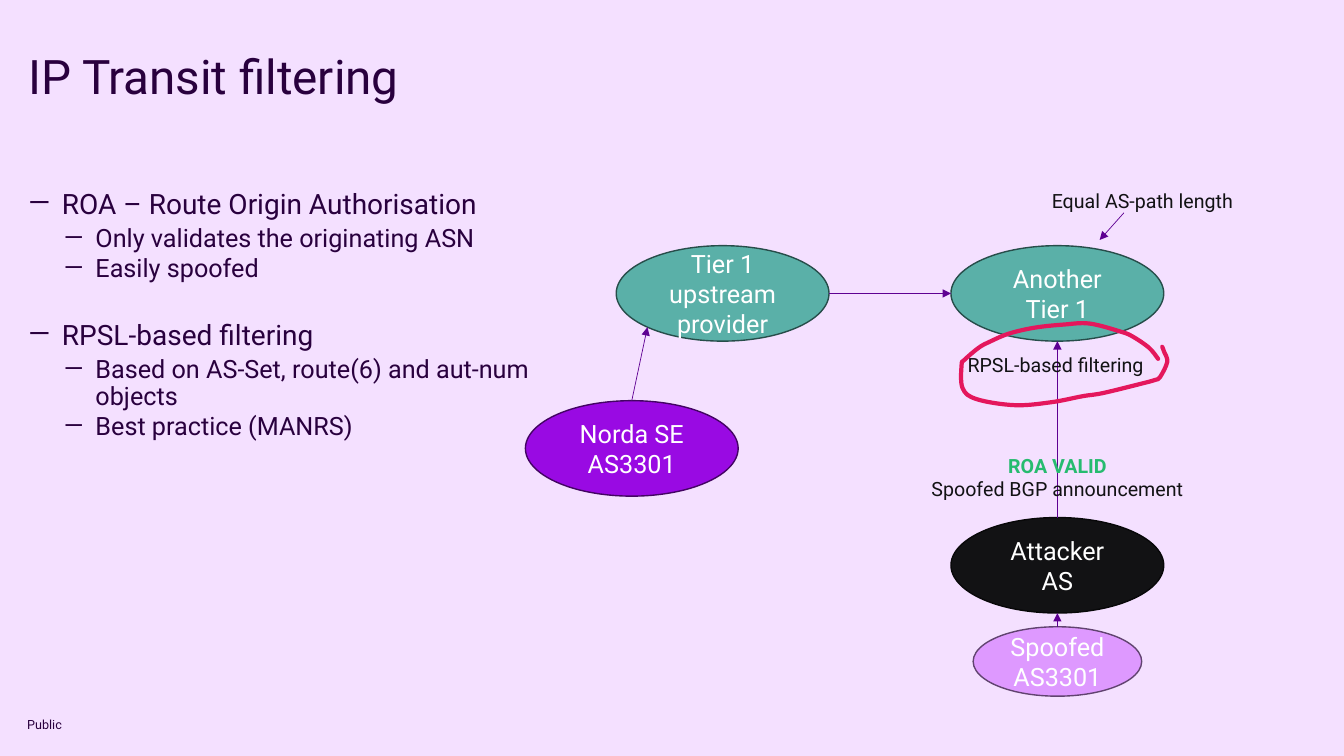
from itertools import chain
from lxml.etree import SubElement
from pptx import Presentation
from pptx.dml.color import RGBColor
from pptx.enum.shapes import MSO_CONNECTOR, MSO_SHAPE
from pptx.enum.text import MSO_ANCHOR, PP_ALIGN
from pptx.oxml.ns import qn
from pptx.util import Pt

FONT = "Roboto"
LILAC = RGBColor(0xF4, 0xE0, 0xFF)
PLUM = RGBColor(0x29, 0x00, 0x3E)
INK = RGBColor(0x12, 0x12, 0x14)
WHITE = RGBColor(0xFF, 0xFF, 0xFF)
TEAL = RGBColor(0x5A, 0xB0, 0xA8)
TEAL_EDGE = RGBColor(0x27, 0x4D, 0x4A)
PURPLE = RGBColor(0x99, 0x0A, 0xE3)
PURPLE_EDGE = RGBColor(0x43, 0x04, 0x63)
INK_EDGE = RGBColor(0x08, 0x08, 0x09)
ORCHID = RGBColor(0xDE, 0x99, 0xFF)
ORCHID_EDGE = RGBColor(0x61, 0x43, 0x70)
ARROW = RGBColor(0x5E, 0x00, 0x92)
GREEN = RGBColor(0x26, 0xBB, 0x6F)
CRIMSON = RGBColor(0xE4, 0x17, 0x5C)

TITLE = "IP Transit filtering"
CLASSIFICATION = "Public"
TOPICS = [
    ("ROA – Route Origin Authorisation",
     ["Only validates the originating ASN", "Easily spoofed"]),
    ("RPSL-based filtering",
     ["Based on AS-Set, route(6) and aut-num objects", "Best practice (MANRS)"]),
]
LARGE, SMALL = (152, 68.2), (120.4, 49.6)
COLUMN = 755.3
NETWORKS = {
    "upstream": ("Tier 1 upstream provider", (516.2, 209.6), LARGE, TEAL, TEAL_EDGE),
    "other": ("Another Tier 1", (COLUMN, 209.6), LARGE, TEAL, TEAL_EDGE),
    "origin": ("Norda SE\nAS3301", (451.3, 320.3), LARGE, PURPLE, PURPLE_EDGE),
    "attacker": ("Attacker AS", (COLUMN, 403.8), LARGE, INK, INK_EDGE),
    "spoofed": ("Spoofed AS3301", (COLUMN, 472.5), SMALL, ORCHID, ORCHID_EDGE),
}
DIAGONAL = 0.707
LINKS = [
    (("origin", 0, -1), ("upstream", -DIAGONAL, DIAGONAL)),
    (("upstream", 1, 0), ("other", -1, 0)),
    (("attacker", 0, -1), ("other", 0, 1)),
    (("spoofed", 0, -1), ("attacker", 0, 1)),
]
PATH_POINTER = ((802.8, 152), (785.5, 171.4))
LABELS = [
    ("RPSL-based filtering", (684, 248.4, 142.6, 24.2), PP_ALIGN.LEFT),
    ("Equal AS-path length", (744.2, 131.4, 147, 24.2), PP_ALIGN.LEFT),
    ("ROA VALID\nSpoofed BGP announcement", (657.4, 320.4, 195.8, 41.2), PP_ALIGN.CENTER),
]
MARKER = [
    (827.3, 256.3), (820.8, 248.4), (809.3, 240.5), (800.6, 236.9),
    (778.3, 231.1), (760.3, 231.8), (739.4, 234), (720.7, 238.3),
    (707, 244.1), (699.1, 248.4), (689, 257), (686.9, 260.6),
    (687.6, 277.2), (697.7, 285.1), (725, 289.4), (751, 287.3),
    (773.3, 283), (787.7, 280.8), (814.3, 274.3), (825.1, 271.4),
    (828.7, 269.3), (833.8, 258.5), (831.6, 251.3), (830.2, 247.7),
]


def style(paragraph, size, color, bold=False):
    for run in paragraph.runs:
        run.font.name = FONT
        run.font.size = Pt(size)
        run.font.color.rgb = color
        run.font.bold = bold


def clear_margins(frame):
    frame.margin_left = frame.margin_right = frame.margin_top = frame.margin_bottom = 0


def add_text(slide, box, text):
    frame = slide.shapes.add_textbox(*map(Pt, box)).text_frame
    frame.text = text
    return frame


def add_topics(slide):
    lines = list(chain.from_iterable(
        [(0, heading), *((1, detail) for detail in details)] for heading, details in TOPICS))
    frame = add_text(slide, (20.2, 131.8, 366.5, 347.8), "\n".join(text for _, text in lines))
    frame.word_wrap = True
    clear_margins(frame)
    for index, (paragraph, (level, _)) in enumerate(zip(frame.paragraphs, lines)):
        size, spacing, after, indent, hanging = [(20, 1.06, 4, 24, 24), (18, 0.9, 2, 48, 22.5)][level]
        paragraph.level = level
        paragraph.line_spacing = spacing
        paragraph.space_after = Pt(after)
        if index and level == 0:
            paragraph.space_before = Pt(21)
        properties = paragraph._p.get_or_add_pPr()
        properties.set("marL", str(Pt(indent)))
        properties.set("indent", str(-Pt(hanging)))
        SubElement(properties, qn("a:buFont")).set("typeface", FONT)
        SubElement(properties, qn("a:buChar")).set("char", "—")
        style(paragraph, size, PLUM)


def add_network(slide, text, center, size, fill, edge):
    (x, y), (width, height) = center, size
    oval = slide.shapes.add_shape(
        MSO_SHAPE.OVAL, Pt(x - width / 2), Pt(y - height / 2), Pt(width), Pt(height))
    oval.shadow.inherit = False
    oval.fill.solid()
    oval.fill.fore_color.rgb = fill
    oval.line.color.rgb = edge
    oval.line.width = Pt(1)
    frame = oval.text_frame
    frame.text = text
    frame.word_wrap = True
    frame.vertical_anchor = MSO_ANCHOR.MIDDLE
    for paragraph in frame.paragraphs:
        paragraph.alignment = PP_ALIGN.CENTER
        style(paragraph, 18, WHITE)


def rim_point(name, across, down):
    _, (x, y), (width, height), _, _ = NETWORKS[name]
    return x + across * width / 2, y + down * height / 2


def add_arrow(slide, start, end):
    arrow = slide.shapes.add_connector(MSO_CONNECTOR.STRAIGHT, *map(Pt, (*start, *end)))
    arrow.line.color.rgb = ARROW
    arrow.line.width = Pt(0.5)
    SubElement(arrow.line._get_or_add_ln(), qn("a:tailEnd")).set("type", "triangle")
    SubElement(arrow._element.spPr, qn("a:effectLst"))


def curve_segments(outline):
    nodes = list(outline.iter(qn("a:pt")))
    points = [(int(node.get("x")), int(node.get("y"))) for node in nodes]
    padded = [points[0], *points, points[-1]]
    for node, a, b, c, d in zip(nodes[1:], padded, padded[1:], padded[2:], padded[3:]):
        segment = node.getparent()
        segment.tag = qn("a:cubicBezTo")
        leaving = [q + (r - p) / 6 for p, q, r in zip(a, b, c)]
        arriving = [r - (s - q) / 6 for q, r, s in zip(b, c, d)]
        for x, y in (leaving, arriving, c):
            handle = SubElement(segment, qn("a:pt"))
            handle.set("x", str(round(x)))
            handle.set("y", str(round(y)))
        segment.remove(node)


def add_marker(slide):
    start, *others = [tuple(map(Pt, point)) for point in MARKER]
    builder = slide.shapes.build_freeform(*start)
    builder.add_line_segments(others, close=False)
    stroke = builder.convert_to_shape()
    curve_segments(stroke._element.spPr)
    stroke.shadow.inherit = False
    stroke.fill.background()
    stroke.line.color.rgb = CRIMSON
    stroke.line.width = Pt(3)
    stroke.line._get_or_add_ln().set("cap", "rnd")


def main():
    deck = Presentation()
    deck.slide_width, deck.slide_height = Pt(960), Pt(540)
    slide = deck.slides.add_slide(deck.slide_layouts[5])
    slide.background.fill.solid()
    slide.background.fill.fore_color.rgb = LILAC

    title = slide.shapes.title
    title.left, title.top, title.width, title.height = map(Pt, (20.2, 39.6, 919.4, 72.7))
    title.text_frame.text = TITLE
    title.text_frame.vertical_anchor = MSO_ANCHOR.TOP
    clear_margins(title.text_frame)
    heading = title.text_frame.paragraphs[0]
    heading.alignment = PP_ALIGN.LEFT
    heading.line_spacing = 0.86
    style(heading, 34, PLUM)

    footer = add_text(slide, (19.4, 505.4, 314, 17.3), CLASSIFICATION)
    footer.vertical_anchor = MSO_ANCHOR.BOTTOM
    clear_margins(footer)
    style(footer.paragraphs[0], 9, PLUM)
    add_topics(slide)

    for network in NETWORKS.values():
        add_network(slide, *network)
    for source, target in LINKS:
        add_arrow(slide, rim_point(*source), rim_point(*target))
    for text, box, alignment in LABELS:
        label = add_text(slide, box, text)
        label.word_wrap = False
        for paragraph in label.paragraphs:
            valid = paragraph.text == "ROA VALID"
            paragraph.alignment = alignment
            style(paragraph, 14, GREEN if valid else INK, valid)
    add_arrow(slide, *PATH_POINTER)
    add_marker(slide)
    deck.save("out.pptx")


if __name__ == "__main__":
    main()
